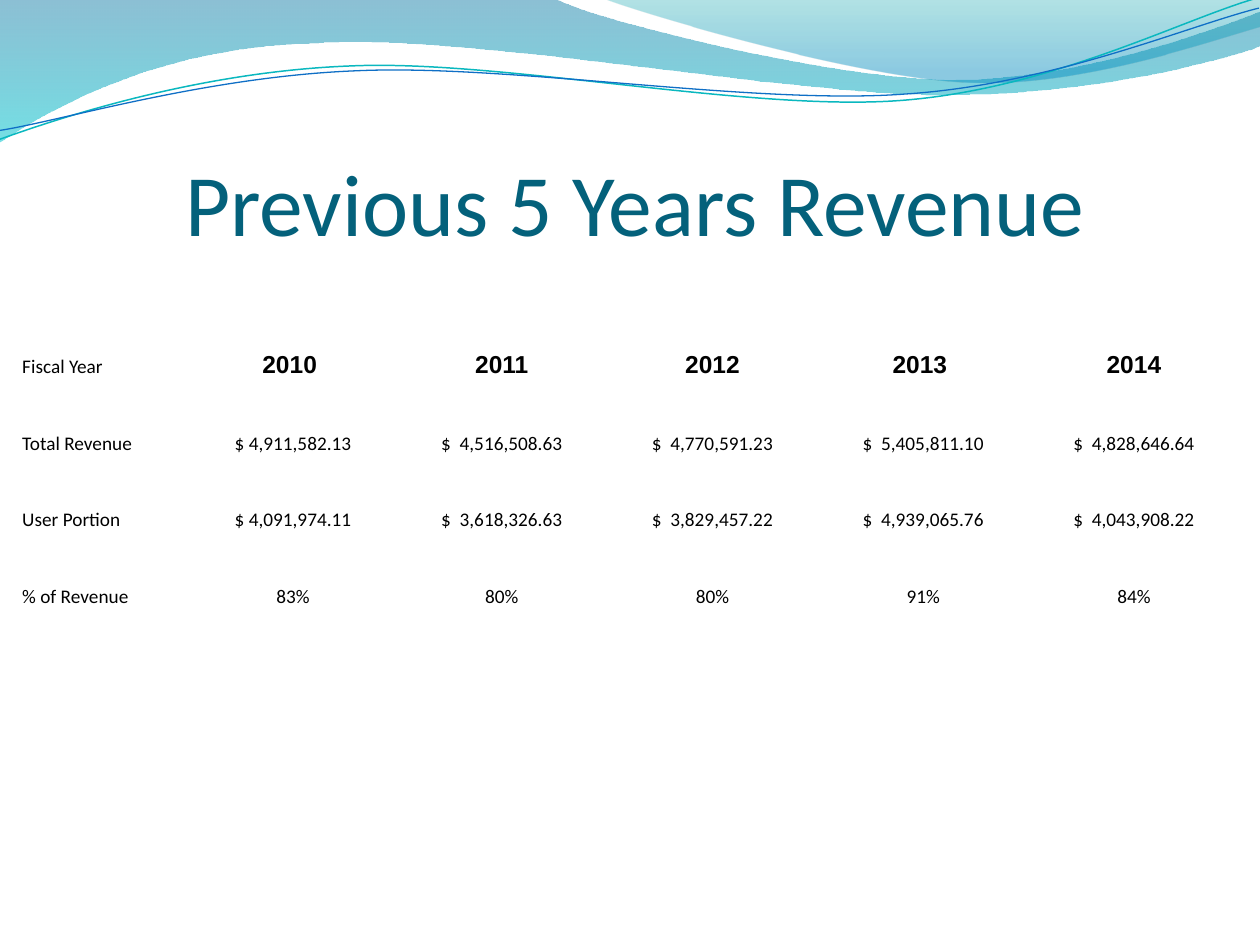
"""Build a revenue slide with a wave header, a title and a five-year table."""
import pptx
import pptx.dml.color
import pptx.enum.text
import pptx.oxml.ns
import pptx.util
from lxml import etree

THEME = {
    "title": "04617B", "text": "000000", "teal": "0AB8BF", "blue": "0F6FC6",
    "body_font": "Calibri", "year_font": "Arial",
    "title_size": 50, "year_size": 14, "body_size": 11,
    "left_wave": [(0, "0074A1", 45), (1, "00C6CF", 55)],
    "right_wave": [(0, "00A1A9", 30), (0.8, "008BBF", 45)],
}
ALIGN = pptx.enum.text.PP_ALIGN
BOTTOM = pptx.enum.text.MSO_ANCHOR.BOTTOM
RGB = pptx.dml.color.RGBColor.from_string
Inches = pptx.util.Inches
qn = pptx.oxml.ns.qn


def put_text(tf, text, *, size, font, color=THEME["text"], bold=False, align=ALIGN.LEFT):
    p = tf.paragraphs[0]
    p.alignment = align
    r = p.add_run()
    r.text = text
    r.font.size = pptx.util.Pt(size)
    r.font.name = font
    r.font.bold = bold
    r.font.color.rgb = RGB(color)


def add_wave(shapes, start, segments, closed):
    points = [(Inches(x), Inches(y)) for seg in segments for x, y in zip(seg[::2], seg[1::2])]
    fb = shapes.build_freeform(Inches(start[0]), Inches(start[1]))
    fb.add_line_segments(points, close=closed)
    sp = fb.convert_to_shape()
    sp.shadow.inherit = False
    lines = iter(list(sp.element.iter(qn("a:lnTo"))))
    for seg in segments:
        group = [next(lines) for _ in seg[::2]]
        if len(group) == 3:
            curve = etree.Element(qn("a:cubicBezTo"))
            group[0].addprevious(curve)
            for line in group:
                curve.append(line[0])
                line.getparent().remove(line)
    return sp


prs = pptx.Presentation()
prs.slide_width, prs.slide_height = Inches(10), Inches(7.5)
W, H = prs.slide_width, prs.slide_height
s = prs.slides.add_slide(prs.slide_layouts[5])

bands = [
    ("left_wave", (0, 0), [
        (4.4, -0.01), (4.76, 0.17, 6.64, 0.63, 7.58, 0.63),
        (8.53, 0.63, 9.58, 0.26, 10, 0.09), (10.01, 0.36),
        (9.83, 0.44, 8.7, 0.76, 7.46, 0.75), (6.22, 0.75, 3.82, 0.28, 2.57, 0.34),
        (1.29, 0.36, 0.46, 0.83, -0.01, 1.13), (0, 0)]),
    ("right_wave", (4.79, -0.01), [
        (5.09, 0.11, 6.82, 0.62, 7.69, 0.65), (8.56, 0.69, 9.61, 0.32, 10, 0.21),
        (10, 0), (4.79, -0.01)]),
]
for name, start, segments in bands:
    sp = add_wave(s.shapes, start, segments, True)
    sp.line.fill.background()
    sp.fill.gradient()
    sp.fill.gradient_angle = 270
    for stop, (position, color, opacity) in zip(sp.fill.gradient_stops, THEME[name]):
        stop.position = position
        stop.color.rgb = RGB(color)
    for clr, (position, color, opacity) in zip(
            sp.element.spPr.iter(qn("a:srgbClr")), THEME[name]):
        etree.SubElement(clr, qn("a:alpha"), val=str(opacity * 1000))

strands = [
    ("teal", 0.85, (-0.02, 0.87), [
        (0.47, 0.72, 1.58, 0.41, 2.78, 0.42), (3.96, 0.42, 5.91, 0.93, 7.12, 0.9),
        (8.32, 0.87, 9.4, 0.36, 10, 0.22)]),
    ("blue", 0.75, (-0.02, 0.8), [
        (0.46, 0.75, 1.64, 0.45, 2.83, 0.46), (4.03, 0.46, 5.96, 0.88, 7.16, 0.85),
        (8.35, 0.83, 9.42, 0.42, 10.01, 0.3)]),
]
curves = []
for color, weight, start, segments in strands:
    sp = add_wave(s.shapes, start, segments, False)
    sp.rotation = 357.3
    sp.fill.background()
    sp.line.color.rgb = RGB(THEME[color])
    sp.line.width = pptx.util.Pt(weight)
    curves.append(sp)
s.shapes.add_group_shape(curves)

rows = [
    ["Fiscal Year", "2010 ", "2011", "2012", "2013 ", "2014"],
    ["Total Revenue", " $ 4,911,582.13 ", " $  4,516,508.63 ", " $  4,770,591.23 ",
     " $  5,405,811.10 ", " $  4,828,646.64 "],
    ["User Portion", " $ 4,091,974.11 ", " $  3,618,326.63 ", " $  3,829,457.22 ",
     " $  4,939,065.76 ", " $  4,043,908.22 "],
    ["% of Revenue", "83%", "80%", "80%", "91%", "84%"],
]
table_w, table_h = Inches(9.67), Inches(2.58)
label_w, first_w, head_h = Inches(1.34), Inches(1.64), Inches(0.76)
col_widths = [label_w, first_w] + [(table_w - label_w - first_w) // 4] * 4
row_heights = [head_h] + [(table_h - head_h) // 3] * 3
table = s.shapes.add_table(len(rows), len(col_widths), W // 60, int(H * 0.3),
                           table_w, table_h).table
table.first_row = table.horz_banding = False
for col, width in zip(table.columns, col_widths):
    col.width = width
for row, height in zip(table.rows, row_heights):
    row.height = height
for i, values in enumerate(rows):
    for j, value in enumerate(values):
        cell = table.cell(i, j)
        cell.fill.background()
        cell.vertical_anchor = BOTTOM
        cell.margin_left = cell.margin_right = cell.margin_top = Inches(0.01)
        cell.margin_bottom = 0
        year = i == 0 and j > 0
        put_text(cell.text_frame, value, bold=year,
                 size=THEME["year_size" if year else "body_size"],
                 font=THEME["year_font" if year else "body_font"],
                 align=ALIGN.CENTER if j else ALIGN.LEFT)

title = s.shapes.title
title.left, title.top = int(W * 0.05), Inches(0.77)
title.width, title.height = Inches(9.08), Inches(1.25)
tf = title.text_frame
tf.word_wrap = True
tf.auto_size = pptx.enum.text.MSO_AUTO_SIZE.NONE
tf.vertical_anchor = BOTTOM
tf.margin_left = tf.margin_right = tf.margin_bottom = 0
tf.margin_top = Inches(0.05)
put_text(tf, "Previous 5 Years Revenue", size=THEME["title_size"], font=THEME["body_font"],
         color=THEME["title"], align=ALIGN.CENTER)
s.shapes.element.append(title.element)

prs.save("out.pptx")
